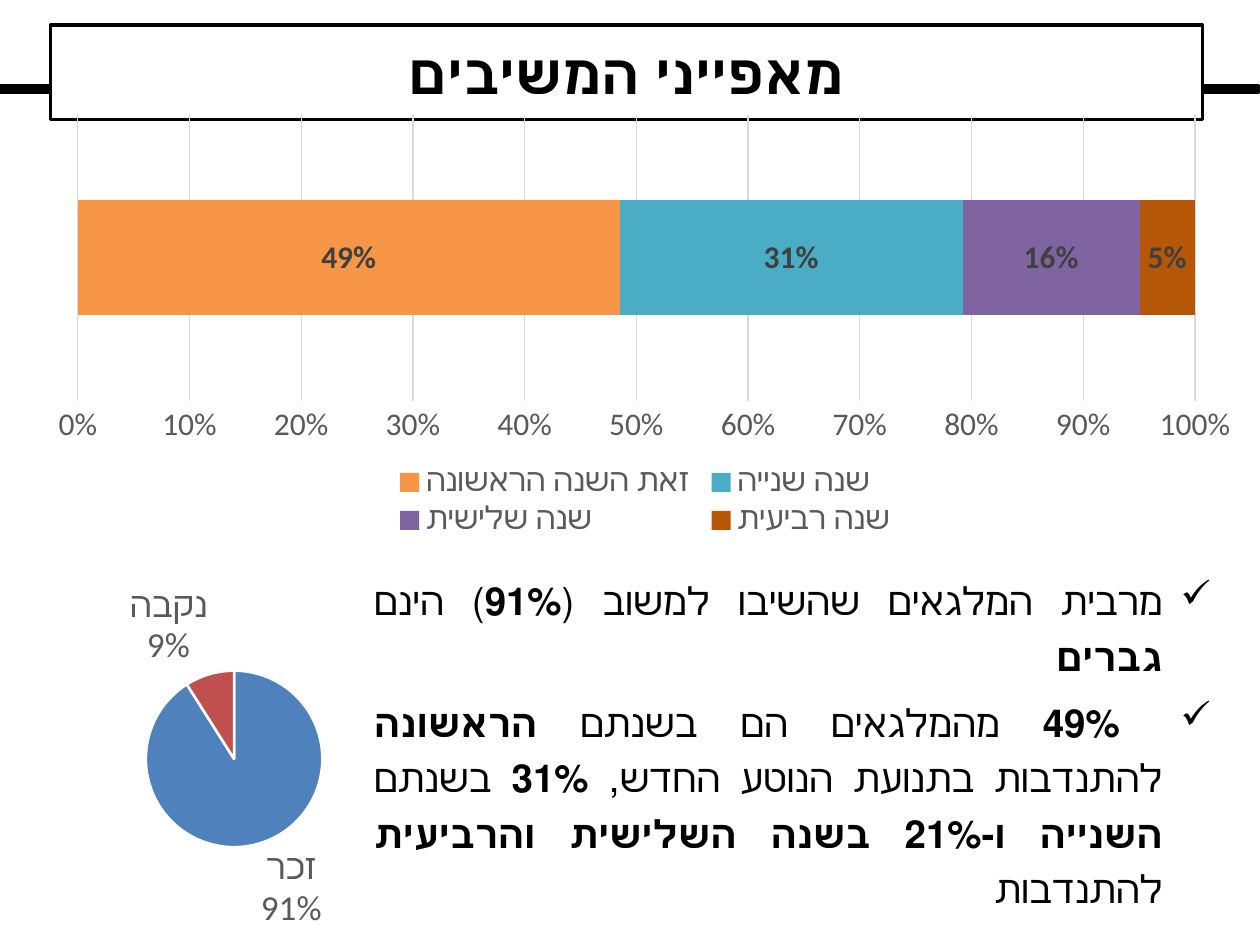
from lxml import etree
from pptx import Presentation
from pptx.chart.data import CategoryChartData
from pptx.dml.color import RGBColor
from pptx.enum import chart as ch, shapes, text
from pptx.oxml import ns
from pptx.util import Cm, Pt

FONT = "Calibri"
GREY = "595959"
TITLE = "מאפייני המשיבים"
YEARS = [
    ("זאת השנה הראשונה", 0.49, "F79646"),
    ("שנה שנייה", 0.31, "4BACC6"),
    ("שנה שלישית", 0.16, "8064A2"),
    ("שנה רביעית", 0.05, "B65708"),
]
GENDERS = [("זכר", 91, "4F81BD"), ("נקבה", 9, "C0504D")]
# Each finding is a list of (words, bold) pieces.
FINDINGS = [
    [("מרבית המלגאים שהשיבו למשוב (", False), ("91%", True),
     (") הינם ", False), ("גברים", True)],
    [(" ", False), ("49%", True), (" מהמלגאים הם בשנתם ", False), ("הראשונה", True),
     (" להתנדבות בתנועת הנוטע החדש, ", False), ("31%", True),
     (" בשנתם ", False), ("השנייה ו-21% בשנה השלישית והרביעית ", True),
     ("להתנדבות", False)],
]
# Left, top, width and height in cm; the inner parts count from their chart.
PIE, PIE_PLOT = (-1.8, 11.5, 12.7, 7.62), (4.74, 2.02, 3.56, 3.56)
BAR, BAR_PLOT = (0.71, 2.13, 24.59, 8.81), (0.86, 0.18, 22.52, 5.77)
BAR_LEGEND = (7.13, 7.15, 10.33, 1.66)


def color(hex_code):
    return RGBColor.from_string(hex_code)


def box(*cm):
    return [Cm(value) for value in cm]


def style_font(font, size, hex_code, bold=False):
    font.name, font.size, font.bold = FONT, Pt(size), bold
    font.color.rgb = color(hex_code)


def add_xml(parent, tag, **attributes):
    return etree.SubElement(parent, ns.qn(tag), attributes)


def write(paragraph, pieces, size, align, bullet=None, indent=0.97):
    """Fill a right-to-left paragraph with (words, bold) pieces."""
    paragraph.alignment = align
    props = paragraph._p.get_or_add_pPr()
    props.set("rtl", "1")
    if bullet:
        paragraph.line_spacing = 1.2
        paragraph.space_before = paragraph.space_after = Pt(3)
        props.set("marL", str(Cm(indent)))
        props.set("indent", str(-Cm(indent)))
        add_xml(props, "a:buChar", char=bullet)
    for words, bold in pieces:
        run = paragraph.add_run()
        run.text = words
        style_font(run.font, size, "000000", bold)


def add_panel(group, place, fill):
    panel = group.shapes.add_shape(shapes.MSO_SHAPE.RECTANGLE, *box(*place))
    panel.shadow.inherit = False
    panel.fill.solid()
    panel.fill.fore_color.rgb = color(fill)
    panel.line.color.rgb = color("000000")
    panel.line.width = Pt(2)
    return panel


def set_layout(part, place, chart_place, inner=False):
    """Place a plot area or legend inside its chart."""
    for old in part.findall(ns.qn("c:layout")):
        part.remove(old)
    layout = etree.Element(ns.qn("c:layout"))
    manual = add_xml(layout, "c:manualLayout")
    if inner:
        add_xml(manual, "c:layoutTarget", val="inner")
    for tag in ("xMode", "yMode"):
        add_xml(manual, "c:" + tag, val="edge")
    for tag, value, whole in zip("xywh", place, chart_place[2:] * 2):
        add_xml(manual, "c:" + tag, val=str(value / whole))
    position = part.find(ns.qn("c:legendPos"))
    part.insert(0 if position is None else part.index(position) + 1, layout)


def add_chart(slide, kind, place, data, size):
    chart = slide.shapes.add_chart(kind, *box(*place), data).chart
    style_font(chart.font, size, "000000")
    chart.has_title = False
    chart.has_legend = False
    return chart


def add_gender_pie(slide):
    data = CategoryChartData()
    data.categories = [name for name, _, _ in GENDERS]
    data.add_series("Series 1", [share for _, share, _ in GENDERS])
    chart = add_chart(slide, ch.XL_CHART_TYPE.PIE, PIE, data, 20)
    set_layout(chart._chartSpace.chart.plotArea, PIE_PLOT, PIE, inner=True)
    plot = chart.plots[0]
    plot.vary_by_categories = True
    for index, (_, _, fill) in enumerate(GENDERS):
        form = plot.series[0].points[index].format
        form.fill.solid()
        form.fill.fore_color.rgb = color(fill)
        form.line.color.rgb = color("FFFFFF")
        form.line.width = Pt(1.5)
    labels = plot.series[0].data_labels
    style_font(labels.font, 20, GREY)
    labels.show_value = False
    labels.show_percentage = labels.show_category_name = True
    labels.position = ch.XL_LABEL_POSITION.BEST_FIT
    separator = etree.Element(ns.qn("c:separator"))
    separator.text = "\n"
    labels._element.find(ns.qn("c:showBubbleSize")).addnext(separator)


def add_year_bar(slide):
    data = CategoryChartData(number_format="0%")
    data.categories = ["1"]
    for name, share, _ in YEARS:
        data.add_series(name, [share])
    chart = add_chart(slide, ch.XL_CHART_TYPE.BAR_STACKED_100, BAR, data, 18)
    set_layout(chart._chartSpace.chart.plotArea, BAR_PLOT, BAR, inner=True)
    plot = chart.plots[0]
    plot.vary_by_categories = False
    plot.gap_width, plot.overlap = 150, 100
    for series, (_, _, fill) in zip(plot.series, YEARS):
        series.format.fill.solid()
        series.format.fill.fore_color.rgb = color(fill)
        labels = series.data_labels
        style_font(labels.font, 18, "404040", True)
        labels.show_value = True
        labels.number_format, labels.number_format_is_linked = "0%", False
        labels.position = ch.XL_LABEL_POSITION.CENTER
    chart.category_axis.visible = False
    axis = chart.value_axis
    style_font(axis.tick_labels.font, 18, GREY)
    axis.tick_labels.number_format = "0%"
    axis.tick_labels.number_format_is_linked = False
    axis.major_tick_mark = ch.XL_TICK_MARK.NONE
    axis.major_unit = 0.1
    axis.format.line.fill.background()
    axis.major_gridlines.format.line.color.rgb = color("D9D9D9")
    axis.major_gridlines.format.line.width = Pt(0.75)
    chart.has_legend = True
    chart.legend.position = ch.XL_LEGEND_POSITION.BOTTOM
    chart.legend.include_in_layout = False
    style_font(chart.legend.font, 18, GREY)
    set_layout(chart.legend._element, BAR_LEGEND, BAR)


def main():
    deck = Presentation()
    deck.slide_width, deck.slide_height = box(25.4, 19.05)
    slide = deck.slides.add_slide(deck.slide_layouts[6])

    header = slide.shapes.add_group_shape()
    add_panel(header, (-0.03, 1.73, 25.4, 0.13), "000000")
    title = add_panel(header, (1.02, 0.51, 23.22, 1.9), "FFFFFF").text_frame
    title.vertical_anchor = text.MSO_ANCHOR.MIDDLE
    write(title.paragraphs[0], [(TITLE, True)], 32, text.PP_ALIGN.CENTER)

    add_gender_pie(slide)
    add_year_bar(slide)

    findings = slide.shapes.add_textbox(*box(7.29, 11.33, 17.37, 4.88)).text_frame
    findings.word_wrap = True
    findings.auto_size = text.MSO_AUTO_SIZE.SHAPE_TO_FIT_TEXT
    for index, pieces in enumerate(FINDINGS):
        paragraph = findings.add_paragraph() if index else findings.paragraphs[0]
        write(paragraph, pieces, 22, text.PP_ALIGN.JUSTIFY, bullet="✓")

    deck.save("out.pptx")


if __name__ == "__main__":
    main()
